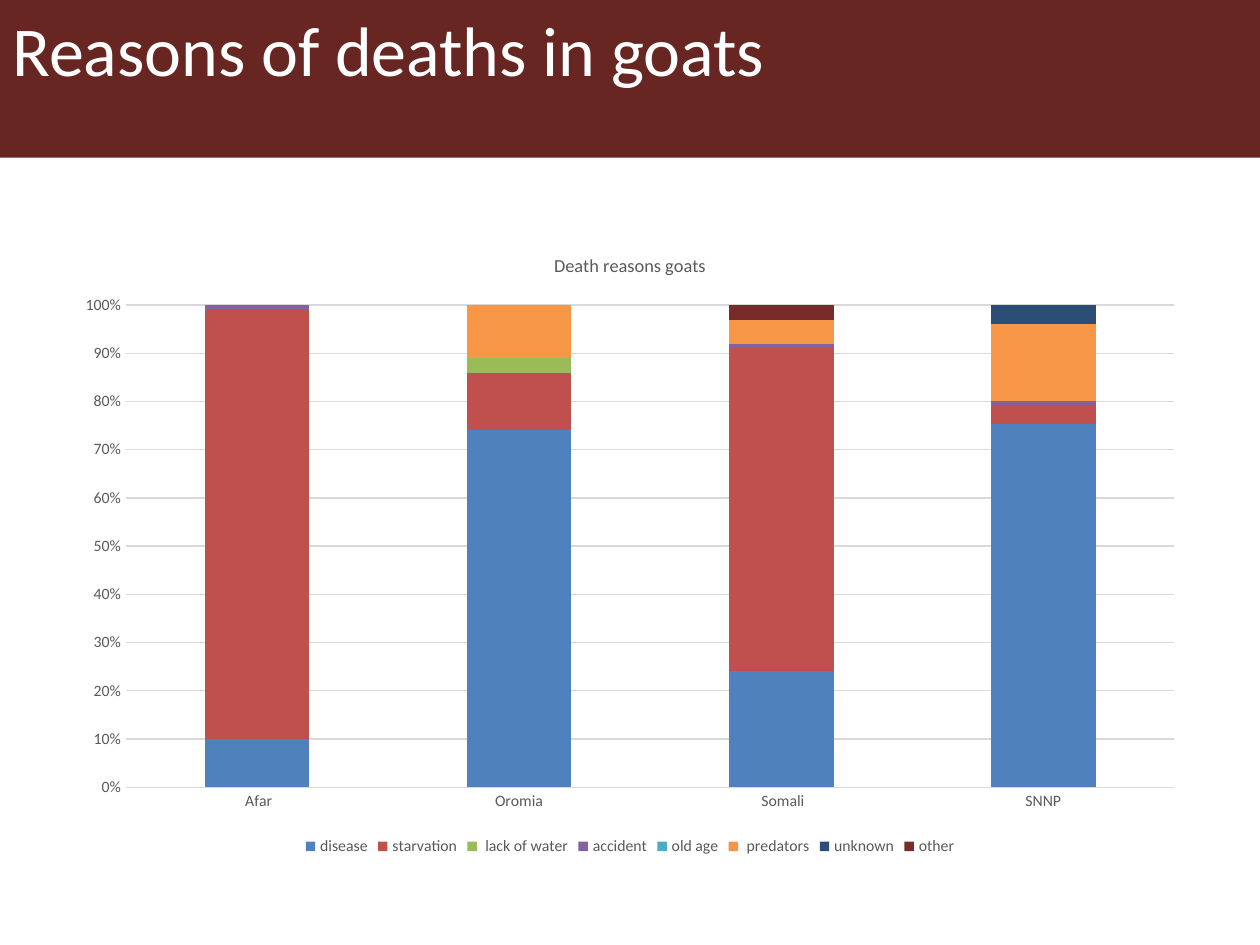
from pptx import Presentation
from pptx.chart.data import CategoryChartData
from pptx.dml.color import RGBColor
from pptx.enum.chart import XL_CHART_TYPE as ChartType
from pptx.enum.chart import XL_LEGEND_POSITION as LegendPosition
from pptx.enum.chart import XL_TICK_MARK as TickMark
from pptx.enum.shapes import MSO_SHAPE as Shape
from pptx.enum.text import MSO_ANCHOR as Anchor
from pptx.util import Cm, Pt

FONT = "Calibri"
COLOURS = {
    "band": "682622", "heading": "FFFFFF", "label": "595959", "grid": "D9D9D9",
    "disease": "4F81BD", "starvation": "C0504D", " lack of water": "9BBB59",
    "accident": "8064A2", "old age": "4BACC6", " predators": "F79646",
    "unknown": "2C4D75", "other": "772C2A",
}
REGIONS = [" Afar", "Oromia", " Somali", "SNNP"]
DEATHS = {
    "disease": (10, 74, 24, 76),
    "starvation": (90, 12, 67, 4),
    " lack of water": (0, 3, 0, 0),
    "accident": (1, 0, 1, 1),
    "old age": (0, 0, 0, 0),
    " predators": (0, 11, 5, 16),
    "unknown": (0, 0, 0, 4),
    "other": (0, 0, 3, 0),
}


def colour(name):
    return RGBColor.from_string(COLOURS[name])


def style_font(font, size, name):
    font.name = FONT
    font.size = Pt(size)
    font.bold = False
    font.color.rgb = colour(name)


prs = Presentation()
prs.slide_width, prs.slide_height = Cm(25.4), Cm(19.05)
slide = prs.slides.add_slide(prs.slide_layouts[6])

# Heading band
band = slide.shapes.add_shape(Shape.RECTANGLE, 0, 0, prs.slide_width, Cm(3.18))
band.shadow.inherit = False
band.fill.solid()
band.fill.fore_color.rgb = colour("band")
band.line.fill.background()

# Heading
heading = slide.shapes.add_textbox(0, 0, Cm(25.2), Cm(3.18)).text_frame
heading.word_wrap = True
heading.vertical_anchor = Anchor.TOP
heading.text = "Reasons of deaths in goats"
style_font(heading.paragraphs[0].runs[0].font, 40, "heading")

# Chart of death reasons by region
data = CategoryChartData(number_format="0")
data.categories = REGIONS
for reason, shares in DEATHS.items():
    data.add_series(reason, shares)
chart = slide.shapes.add_chart(
    ChartType.COLUMN_STACKED_100, Cm(1.27), Cm(4.65), Cm(22.86), Cm(12.7), data
).chart
style_font(chart.font, 9, "label")

chart.has_title = True
chart_title = chart.chart_title.text_frame
chart_title.text = "Death reasons goats"
style_font(chart_title.paragraphs[0].runs[0].font, 10.5, "label")

chart.has_legend = True
chart.legend.position = LegendPosition.BOTTOM
chart.legend.include_in_layout = False
style_font(chart.legend.font, 9, "label")

# Columns
columns = chart.plots[0]
columns.gap_width = 150
columns.overlap = 100
columns.vary_by_categories = False
for reason in columns.series:
    reason.format.fill.solid()
    reason.format.fill.fore_color.rgb = colour(reason.name)

# Axes
regions, shares = chart.category_axis, chart.value_axis
for axis in (regions, shares):
    axis.major_tick_mark = axis.minor_tick_mark = TickMark.NONE
    style_font(axis.tick_labels.font, 9, "label")
shares.minimum_scale, shares.maximum_scale, shares.major_unit = 0, 1, 0.1
shares.tick_labels.number_format = "0%"
shares.tick_labels.number_format_is_linked = False
shares.format.line.fill.background()
shares.has_major_gridlines = True
for line in (regions.format.line, shares.major_gridlines.format.line):
    line.color.rgb = colour("grid")
    line.width = Pt(0.75)

prs.save("out.pptx")
